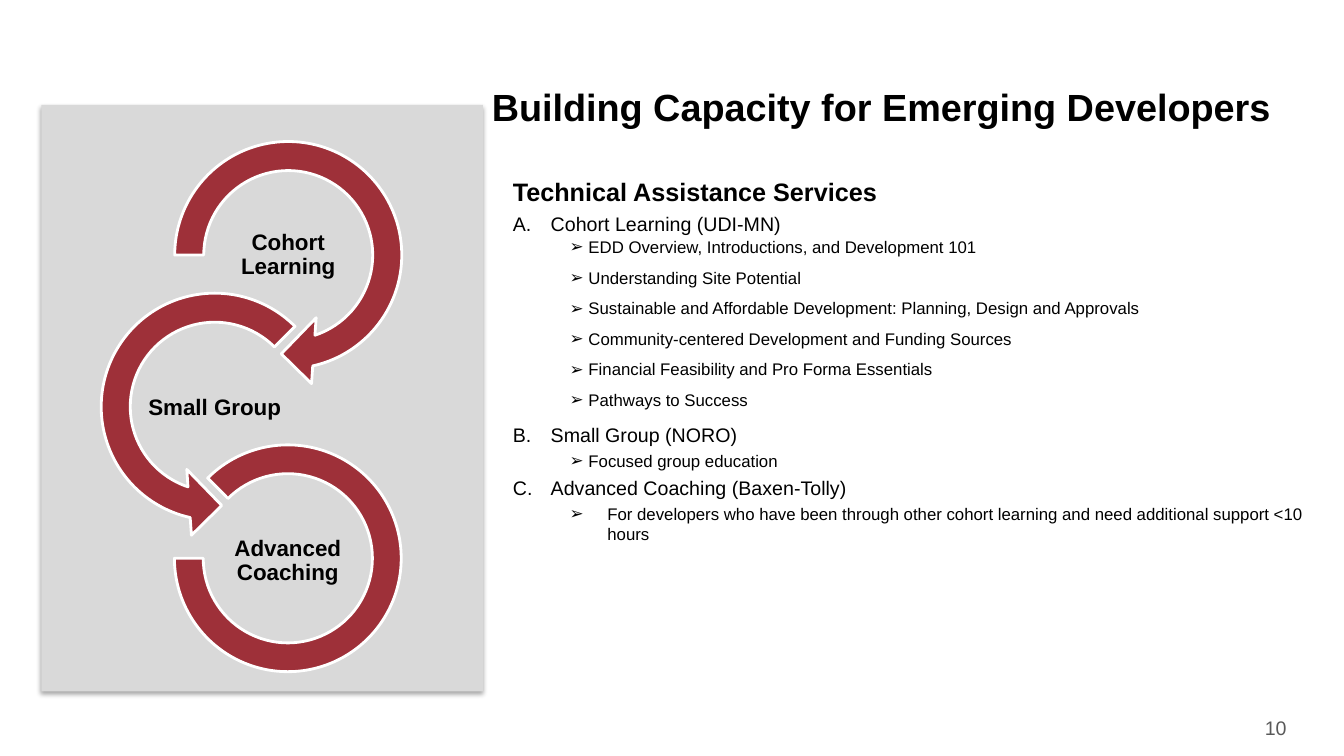
import pptx
import pptx.util
import pptx.oxml
import pptx.oxml.ns
import pptx.dml.color
import pptx.enum.shapes
import pptx.enum.text
import lxml.etree

Pt = pptx.util.Pt
KIND = pptx.enum.shapes.MSO_SHAPE
ALIGN = pptx.enum.text.PP_ALIGN
ANCHOR = pptx.enum.text.MSO_ANCHOR
qn = pptx.oxml.ns.qn

COLORS = {
    "panel": "D9D9D9",
    "ring": "9E3039",
    "edge": "FFFFFF",
    "text": "000000",
    "page": "595959",
}

# label, shape, size, centre x, adjustments
RINGS = [
    ("Cohort Learning", KIND.CIRCULAR_ARROW, 188.6, 205.9,
     (0.11, 11.423, 45, 108, 0.125)),
    ("Small Group", KIND.LEFT_CIRCULAR_ARROW, 188.6, 153.4,
     (0.11, 11.423, 63, 189, 0.125)),
    ("Advanced Coaching", KIND.BLOCK_ARC, 162, 205.6,
     (135, 108, 0.127)),
]
RING_TOP, RING_STEP = 182.2, 108.3
LABEL_TOP, LABEL_STEP = 182.5, 109.1

# name, line spacing and space after of its points, hanging indent, points
SERVICES = [
    ("Cohort Learning (UDI-MN)", 0.9, 6, (54, 13.5), [
        "EDD Overview, Introductions, and Development 101",
        "Understanding Site Potential",
        "Sustainable and Affordable Development: Planning, Design and Approvals",
        "Community-centered Development and Funding Sources",
        "Financial Feasibility and Pro Forma Essentials",
        "Pathways to Success",
    ]),
    ("Small Group (NORO)", 1, 0, (54, 13.5), ["Focused group education"]),
    ("Advanced Coaching (Baxen-Tolly)", 1, 0, (67.5, 27), [
        "For developers who have been through other cohort learning "
        "and need additional support <10 hours",
    ]),
]


def color(name):
    return pptx.dml.color.RGBColor.from_string(COLORS[name])


def style(para, size, bold=False, tint="text"):
    for run in para.runs:
        font = run.font
        font.name = "Arial"
        font.size = Pt(size)
        font.bold = bold
        font.color.rgb = color(tint)


def add_box(slide, left, top, width, height):
    box = slide.shapes.add_textbox(Pt(left), Pt(top), Pt(width), Pt(height))
    box.text_frame.word_wrap = True
    return box.text_frame


def add_text(slide, place, text, size, bold=False, tint="text"):
    frame = add_box(slide, *place)
    frame.text = text
    style(frame.paragraphs[0], size, bold, tint)
    return frame


def add_shape(slide, kind, place, tint):
    shape = slide.shapes.add_shape(kind, *[Pt(n) for n in place])
    shape.shadow.inherit = False
    shape.fill.solid()
    shape.fill.fore_color.rgb = color(tint)
    return shape


def add_panel(slide):
    panel = add_shape(slide, KIND.RECTANGLE, (29.5, 74.9, 315.4, 419), "panel")
    panel.line.fill.background()
    glow = panel._element.spPr.find(qn("a:effectLst"))
    drop = lxml.etree.SubElement(
        glow, qn("a:outerShdw"), blurRad=str(Pt(3.1)), dist=str(Pt(1.8)),
        dir="5400000", algn="t", rotWithShape="0")
    tint = lxml.etree.SubElement(drop, qn("a:srgbClr"), val=COLORS["text"])
    lxml.etree.SubElement(tint, qn("a:alpha"), val="35000")


def add_ring(slide, row, label, kind, size, mid, adjust):
    top = RING_TOP + RING_STEP * row - size / 2
    ring = add_shape(slide, kind, (mid - size / 2, top, size, size), "ring")
    for spot, value in enumerate(adjust):
        ring.adjustments[spot] = value
    ring.line.color.rgb = color("edge")
    ring.line.width = Pt(2)

    wide, high = 105, 52.5
    top = LABEL_TOP + LABEL_STEP * row - high / 2
    frame = add_text(slide, (mid - wide / 2, top, wide, high), label, 16, True)
    frame.vertical_anchor = ANCHOR.MIDDLE
    frame.margin_left = frame.margin_right = Pt(0.7)
    frame.margin_top = frame.margin_bottom = Pt(0.7)
    para = frame.paragraphs[0]
    para.alignment = ALIGN.CENTER
    para.line_spacing = 0.9


def add_item(frame, text, size, indent, level=0, lines=1, after=0):
    """Append a lettered service (level 0) or an arrow point (level 1)."""
    para = frame.add_paragraph()
    para.text = text
    para.level = level
    para.line_spacing = lines
    para.space_before = Pt(round(0.24 * size, 1))
    para.space_after = Pt(after)
    left, hang = indent
    props = para._p.get_or_add_pPr()
    props.set("marL", str(Pt(left)))
    props.set("indent", str(-Pt(hang)))
    lxml.etree.SubElement(props, qn("a:buFont"), typeface="Arial")
    if level:
        lxml.etree.SubElement(props, qn("a:buChar"), char="➢")
    else:
        lxml.etree.SubElement(props, qn("a:buAutoNum"), type="alphaUcPeriod")
    style(para, size)


def add_list(slide):
    frame = add_text(slide, (359.3, 122.5, 585.4, 365),
                     "Technical Assistance Services", 18, True)
    for name, lines, after, indent, points in SERVICES:
        add_item(frame, name, 14, (27, 27))
        for point in points:
            add_item(frame, point, 12, indent, 1, lines, after)


def main():
    deck = pptx.Presentation()
    deck.slide_width, deck.slide_height = Pt(960), Pt(540)
    slide = deck.slides.add_slide(deck.slide_layouts[6])
    add_panel(slide)
    for row, ring in enumerate(RINGS):
        add_ring(slide, row, *ring)
    add_list(slide)
    add_text(slide, (896.4, 507.6, 62.6, 28.8), "10", 14, tint="page")
    add_text(slide, (344.2, 56.5, 612, 45.4),
             "Building Capacity for Emerging Developers", 27, True)
    deck.save("out.pptx")


if __name__ == "__main__":
    main()
